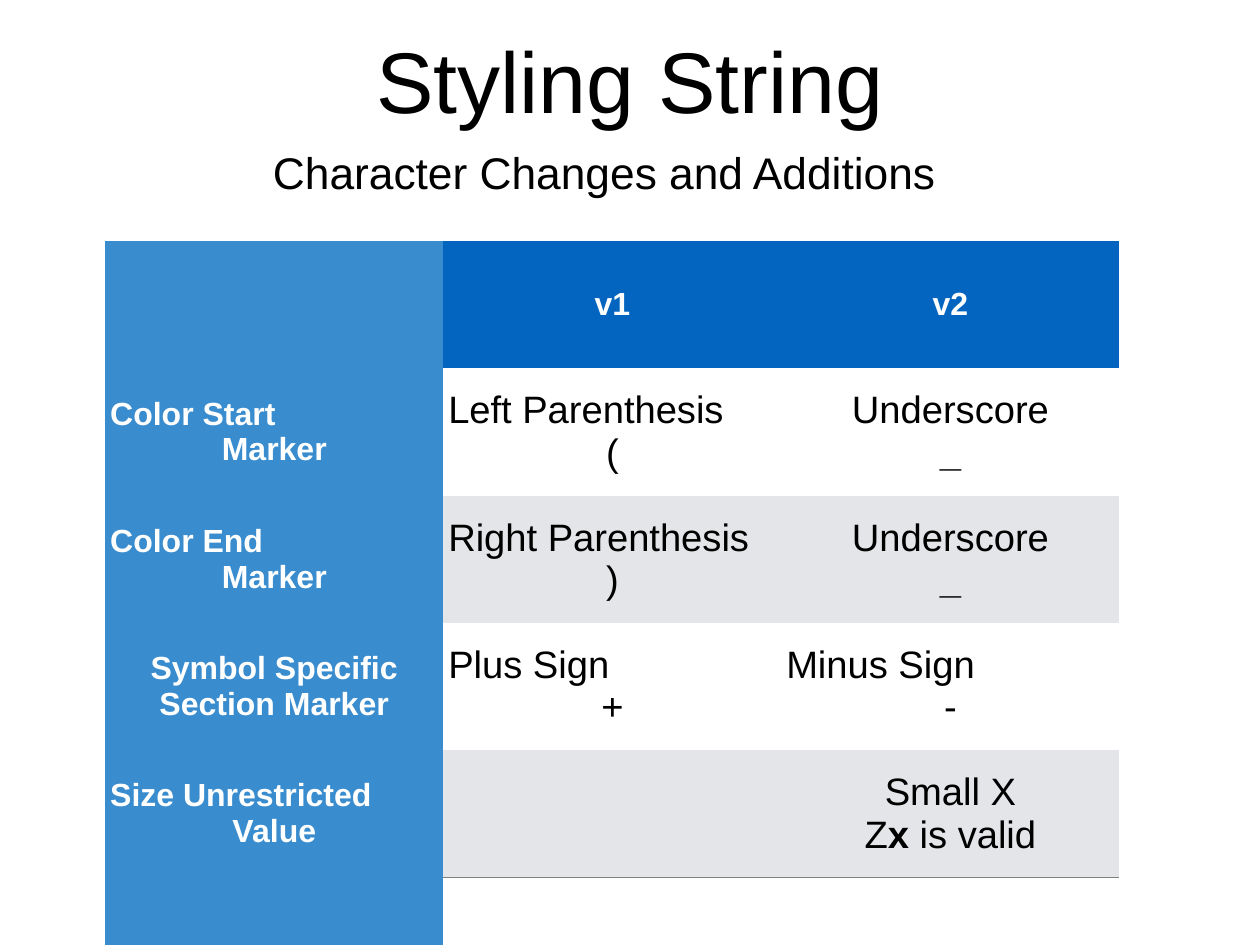
from lxml.etree import SubElement
from pptx import Presentation
from pptx.dml.color import RGBColor
from pptx.enum.text import MSO_ANCHOR as Anchor, PP_ALIGN as Align
from pptx.oxml import parse_xml
from pptx.oxml.ns import nsdecls, qn
from pptx.util import Cm, Pt

COLORS = {
    "text": "000000", "light": "FFFFFF", "header": "0365C0",
    "labels": "398CCE", "band": "E3E5E8", "rule": "808080",
}
INSET = Cm(0.14)
NO_STYLE = "{2D5ABB26-0587-4C30-8999-92F81FD0307C}"


def format_run(run, size, color, bold=False):
    run.font.name = "Arial"
    run.font.size = Pt(size)
    run.font.bold = bold
    run.font.color.rgb = RGBColor.from_string(COLORS[color])


prs = Presentation()
prs.slide_width, prs.slide_height = Cm(36.12), Cm(27.1)
slide = prs.slides.add_slide(prs.slide_layouts[6])

# Headings
headings = [
    ("Styling String", 70, (0.48, 0.43, 35.15, 3.45), Anchor.BOTTOM, True),
    ("Character Changes and Additions", 36, (7.67, 4.04, 19.3, 1.8), Anchor.MIDDLE, False),
]
for words, size, place, anchor, wrap in headings:
    frame = slide.shapes.add_textbox(*map(Cm, place)).text_frame
    frame.margin_left = frame.margin_right = INSET
    frame.margin_top = frame.margin_bottom = INSET
    frame.vertical_anchor = anchor
    frame.word_wrap = wrap
    frame.text = words
    frame.paragraphs[0].alignment = Align.CENTER
    format_run(frame.paragraphs[0].runs[0], size, "text")

# Table of markers by version
markers = [
    ("", "v1", "v2"),
    ("Color Start\nMarker", "Left Parenthesis\n(", "Underscore\n_"),
    ("Color End\nMarker", "Right Parenthesis\n)", "Underscore\n_"),
    ("Symbol Specific Section Marker", "Plus Sign\n+", "Minus Sign\n-"),
    ("Size Unrestricted\nValue", "", "Small X\nZx is valid"),
    ("", "", ""),
]
left_lines = {
    "Color Start", "Color End", "Size Unrestricted", "Left Parenthesis",
    "Right Parenthesis", "Plus Sign", "Minus Sign",
}
column_width, row_height = Cm(9.69), Cm(3.65)
table = slide.shapes.add_table(
    len(markers), 3, Cm(3.02), Cm(6.91), column_width * 3, row_height * len(markers)
).table
table.first_row = table.horz_banding = False
table._tbl.tblPr.find(qn("a:tableStyleId")).text = NO_STYLE
for column in table.columns:
    column.width = column_width
for row in table.rows:
    row.height = row_height

for r, entries in enumerate(markers):
    for c, entry in enumerate(entries):
        cell = table.cell(r, c)
        is_heading = r == 0 or c == 0
        if c == 0:
            fill = "labels"
        elif r == 0:
            fill = "header"
        else:
            fill = "light" if r % 2 else "band"
        cell.fill.solid()
        cell.fill.fore_color.rgb = RGBColor.from_string(COLORS[fill])
        cell.margin_left = cell.margin_right = INSET
        cell.margin_top = cell.margin_bottom = INSET
        cell.vertical_anchor = Anchor.MIDDLE
        cell.text = entry
        for line in cell.text_frame.paragraphs:
            line.alignment = Align.LEFT if line.text in left_lines else Align.CENTER
            if line.text == "Zx is valid":
                line.text = "Z"
                line.add_run().text = "x"
                line.add_run().text = " is valid"
            for run in line.runs:
                if is_heading:
                    format_run(run, 26, "light", True)
                else:
                    format_run(run, 31, "text", run.text in ("x", "_"))

# Rule above the last row
for c in (1, 2):
    rule = parse_xml(f'<a:lnT {nsdecls("a")} w="{Pt(1)}"/>')
    rule_fill = SubElement(rule, qn("a:solidFill"))
    SubElement(rule_fill, qn("a:srgbClr"), val=COLORS["rule"])
    table.cell(len(markers) - 1, c)._tc.get_or_add_tcPr().insert(0, rule)

prs.save("out.pptx")
